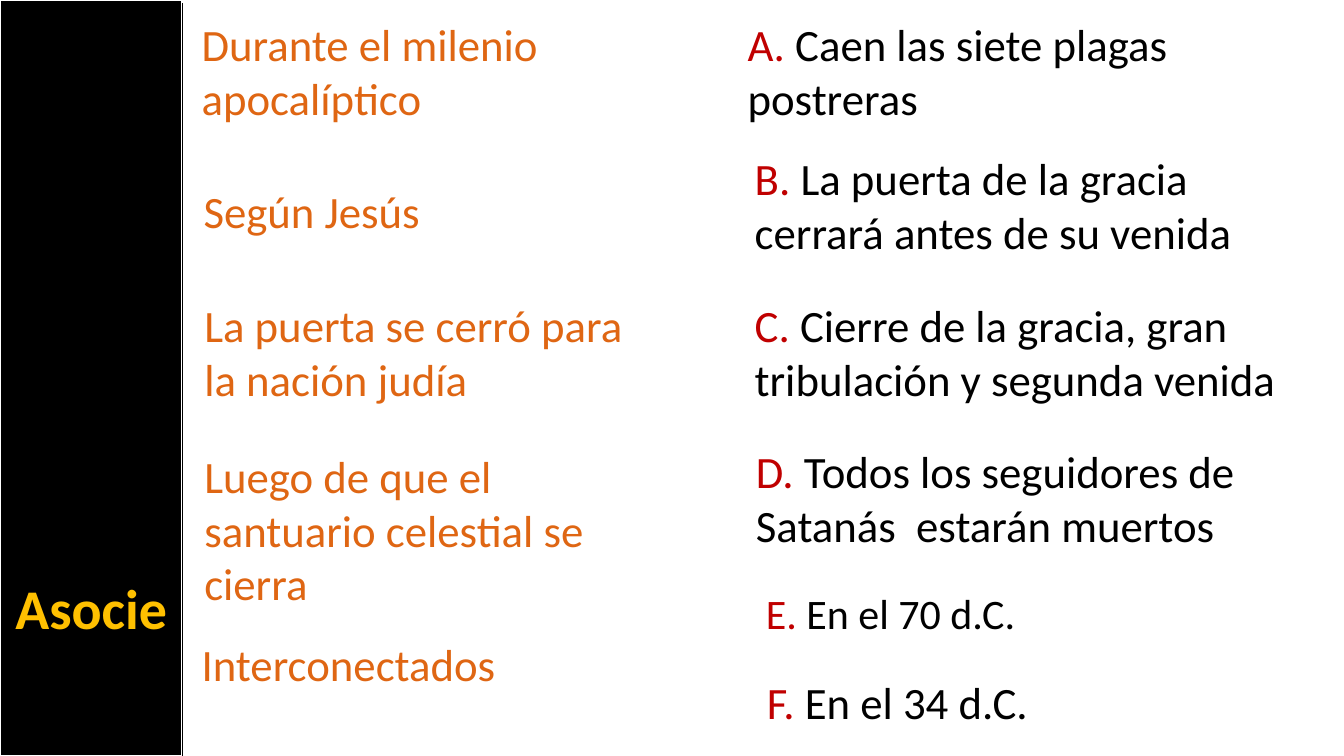
from dataclasses import dataclass

from lxml import etree
from pptx import Presentation
from pptx import util as u
from pptx.dml.color import RGBColor
from pptx.enum import shapes, text
from pptx.oxml.ns import qn


@dataclass(frozen=True)
class Theme:
    font: str = "Calibri"
    band: RGBColor = RGBColor(0x00, 0x00, 0x00)
    edge: RGBColor = RGBColor(0xFF, 0xFF, 0xFF)
    title: RGBColor = RGBColor(0xFF, 0xC0, 0x00)
    prompt: RGBColor = RGBColor(0xDF, 0x66, 0x13)
    letter: RGBColor = RGBColor(0xC0, 0x00, 0x00)
    answer: RGBColor = RGBColor(0x00, 0x00, 0x00)
    title_size: int = 40
    text_size: int = 32
    small_size: int = 30


WIDTH, HEIGHT, BAND_WIDTH = 33.87, 19.05, 4.6
ONE_LINE, TWO_LINES, THREE_LINES = 1.63, 3, 4.37

# left, top, width, height in centimetres, then the wording
PROMPTS = [
    (4.83, 0.3, 11.86, TWO_LINES, "Durante el milenio apocalíptico"),
    (4.88, 4.5, 11.73, ONE_LINE, "Según Jesús"),
    (4.9, 7.39, 11.1, TWO_LINES, "La puerta se cerró para la nación judía"),
    (4.9, 11.18, 12.12, THREE_LINES, "Luego de que el santuario celestial se cierra"),
    (4.83, 15.93, 11.66, ONE_LINE, "Interconectados"),
]
ANSWERS = [
    (18.59, 0.3, 12.42, TWO_LINES, "Caen las siete plagas postreras"),
    (18.77, 3.68, 12.98, TWO_LINES, "La puerta de la gracia cerrará antes de su venida"),
    (18.77, 7.39, 13.77, TWO_LINES, "Cierre de la gracia, gran tribulación y segunda venida"),
    (18.8, 11.05, 12.95, TWO_LINES, "Todos los seguidores de Satanás  estarán muertos"),
    (19.05, 14.68, 8.71, 1.55, "En el 70 d.C."),
    (19.08, 16.87, 12.37, ONE_LINE, "En el 34 d.C."),
]


class MatchingPage:
    def __init__(self, deck, theme):
        self.theme = theme
        self.page = deck.slides.add_slide(deck.slide_layouts[5])

    def band(self, left, top, width, height):
        band = self.page.shapes.add_shape(
            shapes.MSO_SHAPE.RECTANGLE, *map(u.Cm, (left, top, width, height)))
        band.shadow.inherit = False
        band.fill.solid()
        band.fill.fore_color.rgb = self.theme.band
        band.line.color.rgb = self.theme.edge
        band.line.width = u.Pt(1.5)

    def rule(self, x, top, bottom):
        rule = self.page.shapes.add_connector(
            shapes.MSO_CONNECTOR.STRAIGHT, *map(u.Cm, (x, top, x, bottom)))
        rule.line.color.rgb = self.theme.band
        rule.line.width = u.Pt(1)
        etree.SubElement(rule._element.spPr, qn("a:effectLst"))

    def title(self, left, top, width, height, wording):
        title = self.page.shapes.title
        title.left, title.top, title.width, title.height = map(
            u.Cm, (left, top, width, height))
        frame = title.text_frame
        frame.text = wording
        frame.word_wrap = True
        frame.auto_size = text.MSO_AUTO_SIZE.NONE
        frame.vertical_anchor = text.MSO_ANCHOR.TOP
        para = frame.paragraphs[0]
        para.alignment = text.PP_ALIGN.CENTER
        self.style(para.font, self.theme.title_size, self.theme.title)
        para.font.bold = True
        # The title must lie above the band
        self.page.shapes._spTree.append(title._element)

    def text_box(self, left, top, width, height, size, spans):
        """Write (wording, colour) spans as one wrapped paragraph."""
        box = self.page.shapes.add_textbox(*map(u.Cm, (left, top, width, height)))
        box.text_frame.word_wrap = True
        box.text_frame.auto_size = text.MSO_AUTO_SIZE.SHAPE_TO_FIT_TEXT
        para = box.text_frame.paragraphs[0]
        self.style(para.font, size, spans[0][1])
        for wording, color in spans:
            span = para.add_run()
            span.text = wording
            self.style(span.font, size, color)

    def style(self, font, size, color):
        font.name = self.theme.font
        font.size = u.Pt(size)
        font.color.rgb = color


def main():
    deck = Presentation()
    deck.slide_width, deck.slide_height = u.Cm(WIDTH), u.Cm(HEIGHT)
    theme = Theme()
    page = MatchingPage(deck, theme)

    page.band(0, 0, BAND_WIDTH, HEIGHT)
    for *place, wording in PROMPTS:
        page.text_box(*place, theme.text_size, [(wording, theme.prompt)])
    for letter, (*place, wording) in zip("ABCDEF", ANSWERS):
        size = theme.small_size if letter == "E" else theme.text_size
        page.text_box(*place, size,
                      [(f"{letter}. ", theme.letter), (wording, theme.answer)])
    page.title(0, 14.33, BAND_WIDTH, 1.96, "Asocie")
    page.rule(BAND_WIDTH, 0.08, HEIGHT)

    deck.save("out.pptx")


if __name__ == "__main__":
    main()
